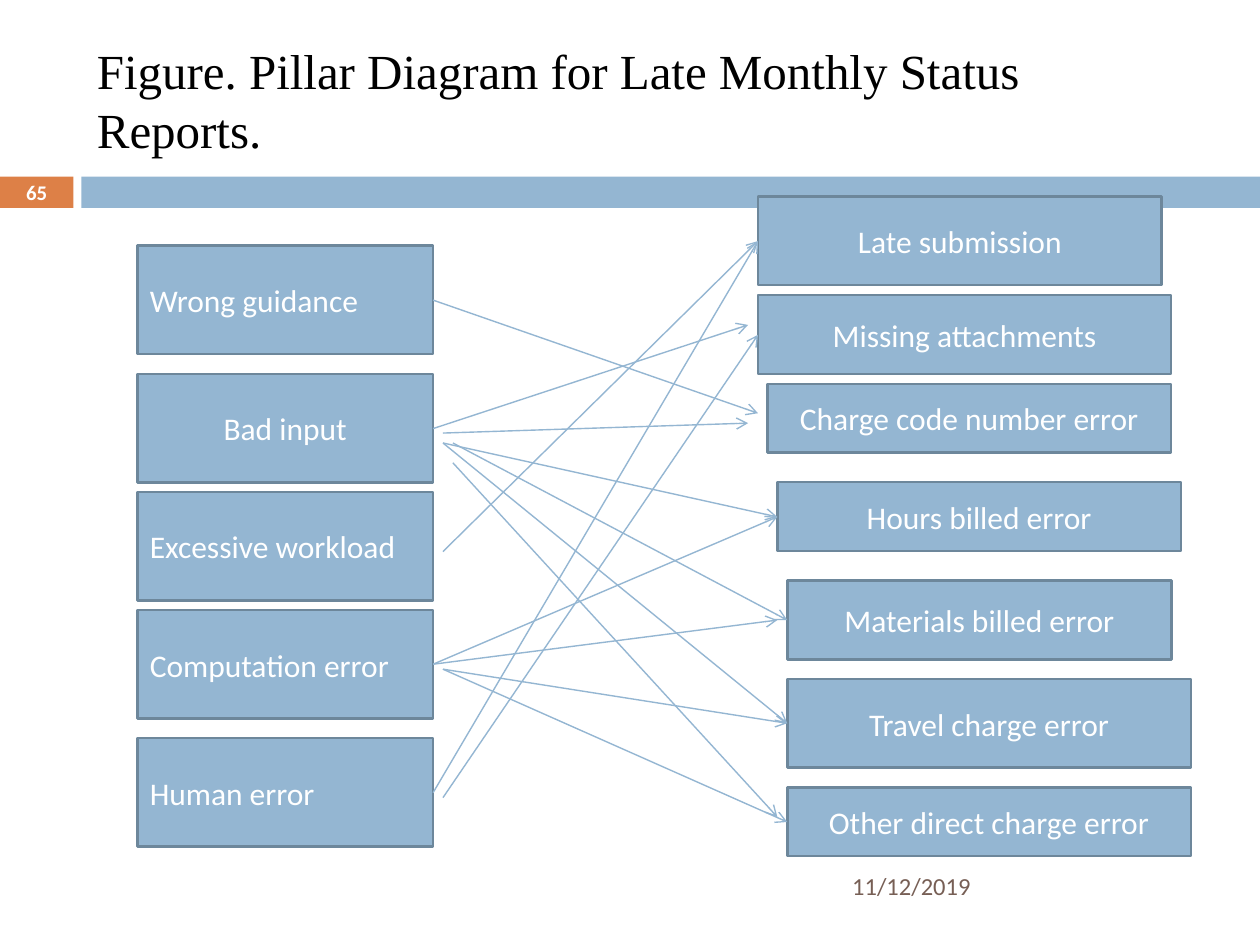
"""Build the pillar diagram slide linking causes to errors in late monthly status reports."""
from dataclasses import dataclass

from lxml import etree
from pptx import Presentation
from pptx.dml.color import RGBColor
from pptx.enum.shapes import MSO_CONNECTOR, MSO_SHAPE
from pptx.enum.text import MSO_ANCHOR, PP_ALIGN
from pptx.oxml.ns import qn
from pptx.util import Cm, Pt

RECTANGLE = MSO_SHAPE.RECTANGLE
STRAIGHT = MSO_CONNECTOR.STRAIGHT
MIDDLE = MSO_ANCHOR.MIDDLE
LEFT, CENTER = PP_ALIGN.LEFT, PP_ALIGN.CENTER


@dataclass(frozen=True)
class Theme:
    blue: RGBColor = RGBColor(0x94, 0xB6, 0xD2)
    outline: RGBColor = RGBColor(0x6D, 0x87, 0x9B)
    orange: RGBColor = RGBColor(0xDD, 0x80, 0x47)
    brown: RGBColor = RGBColor(0x77, 0x5F, 0x55)
    white: RGBColor = RGBColor(0xFF, 0xFF, 0xFF)
    black: RGBColor = RGBColor(0, 0, 0)
    title_font: str = "Times New Roman"
    body_font: str = "Calibri"
    title_size: Pt = Pt(28)
    box_size: Pt = Pt(18)
    date_size: Pt = Pt(14)
    number_size: Pt = Pt(11.9)
    box_line: Pt = Pt(1.5)
    arrow_line: Pt = Pt(0.79)


theme = Theme()


def write_text(shape, text, size, color, alignment=LEFT, font=theme.body_font, bold=False):
    text_frame = shape.text_frame
    text_frame.text = text
    text_frame.word_wrap = True
    text_frame.vertical_anchor = MIDDLE
    paragraph = text_frame.paragraphs[0]
    paragraph.alignment = alignment
    run_font = paragraph.runs[0].font
    run_font.name, run_font.size, run_font.bold = font, size, bold
    run_font.color.rgb = color


def add_rectangle(slide, left, top, width, height, fill, outline=None):
    shape = slide.shapes.add_shape(RECTANGLE, Cm(left), Cm(top), Cm(width), Cm(height))
    shape.shadow.inherit = False
    shape.fill.solid()
    shape.fill.fore_color.rgb = fill
    if outline is None:
        shape.line.fill.background()
    else:
        shape.line.color.rgb = outline
        shape.line.width = theme.box_line
    return shape


presentation = Presentation()
presentation.slide_width, presentation.slide_height = Cm(25.4), Cm(19.05)
slide = presentation.slides.add_slide(presentation.slide_layouts[5])

number_band = add_rectangle(slide, 0, 3.56, 1.48, 0.63, theme.orange)
number_band.text_frame.margin_top = number_band.text_frame.margin_bottom = 0
write_text(number_band, "65", theme.number_size, theme.white, CENTER, bold=True)
add_rectangle(slide, 1.64, 3.56, 23.76, 0.63, theme.blue)

title = slide.shapes.title
title.left, title.top, title.width, title.height = Cm(1.7), Cm(0.64), Cm(22.5), Cm(2.74)
write_text(title, "Figure. Pillar Diagram for Late Monthly Status Reports.",
           theme.title_size, theme.black, font=theme.title_font)

causes = [
    ("Wrong guidance", 4.95, LEFT),
    ("Bad input", 7.54, CENTER),
    ("Excessive workload", 9.92, LEFT),
    ("Computation error", 12.3, LEFT),
    ("Human error", 14.88, LEFT),
]
for text, top, alignment in causes:
    box = add_rectangle(slide, 2.77, top, 5.96, 2.19, theme.blue, theme.outline)
    write_text(box, text, theme.box_size, theme.white, alignment)

errors = [
    ("Late submission", 15.28, 3.96, 8.14, 1.79),
    ("Missing attachments", 15.28, 5.95, 8.33, 1.59),
    ("Charge code number error", 15.47, 7.74, 8.14, 1.39),
    ("Hours billed error", 15.67, 9.72, 8.14, 1.39),
    ("Materials billed error", 15.87, 11.7, 7.75, 1.6),
    ("Travel charge error", 15.87, 13.69, 8.14, 1.79),
    ("Other direct charge error", 15.87, 15.87, 8.14, 1.39),
]
for text, left, top, width, height in errors:
    box = add_rectangle(slide, left, top, width, height, theme.blue, theme.outline)
    write_text(box, text, theme.box_size, theme.white, CENTER)

arrows = [
    (8.73, 6.05, 15.28, 8.33),
    (8.73, 8.64, 15.08, 6.55),
    (8.93, 8.73, 15.08, 8.53),
    (8.93, 8.93, 15.67, 10.42),
    (9.13, 8.93, 15.87, 12.5),
    (8.93, 8.93, 15.87, 14.58),
    (9.13, 9.33, 15.67, 16.47),
    (8.93, 11.12, 15.28, 4.86),
    (8.73, 13.39, 15.67, 10.42),
    (8.73, 13.39, 15.67, 12.5),
    (8.93, 13.49, 15.87, 14.58),
    (8.93, 13.49, 15.87, 16.57),
    (8.73, 15.98, 15.28, 4.86),
    (8.93, 16.08, 15.28, 6.75),
]
for ends in arrows:
    arrow = slide.shapes.add_connector(STRAIGHT, *map(Cm, ends))
    arrow.line.color.rgb = theme.blue
    arrow.line.width = theme.arrow_line
    properties = arrow._element.spPr
    etree.SubElement(properties.find(qn("a:ln")), qn("a:tailEnd"), type="arrow")
    etree.SubElement(properties, qn("a:effectLst"))

date = slide.shapes.add_textbox(Cm(16.93), Cm(17.36), Cm(7.41), Cm(1.01))
write_text(date, "11/12/2019", theme.date_size, theme.brown)

presentation.save("out.pptx")
